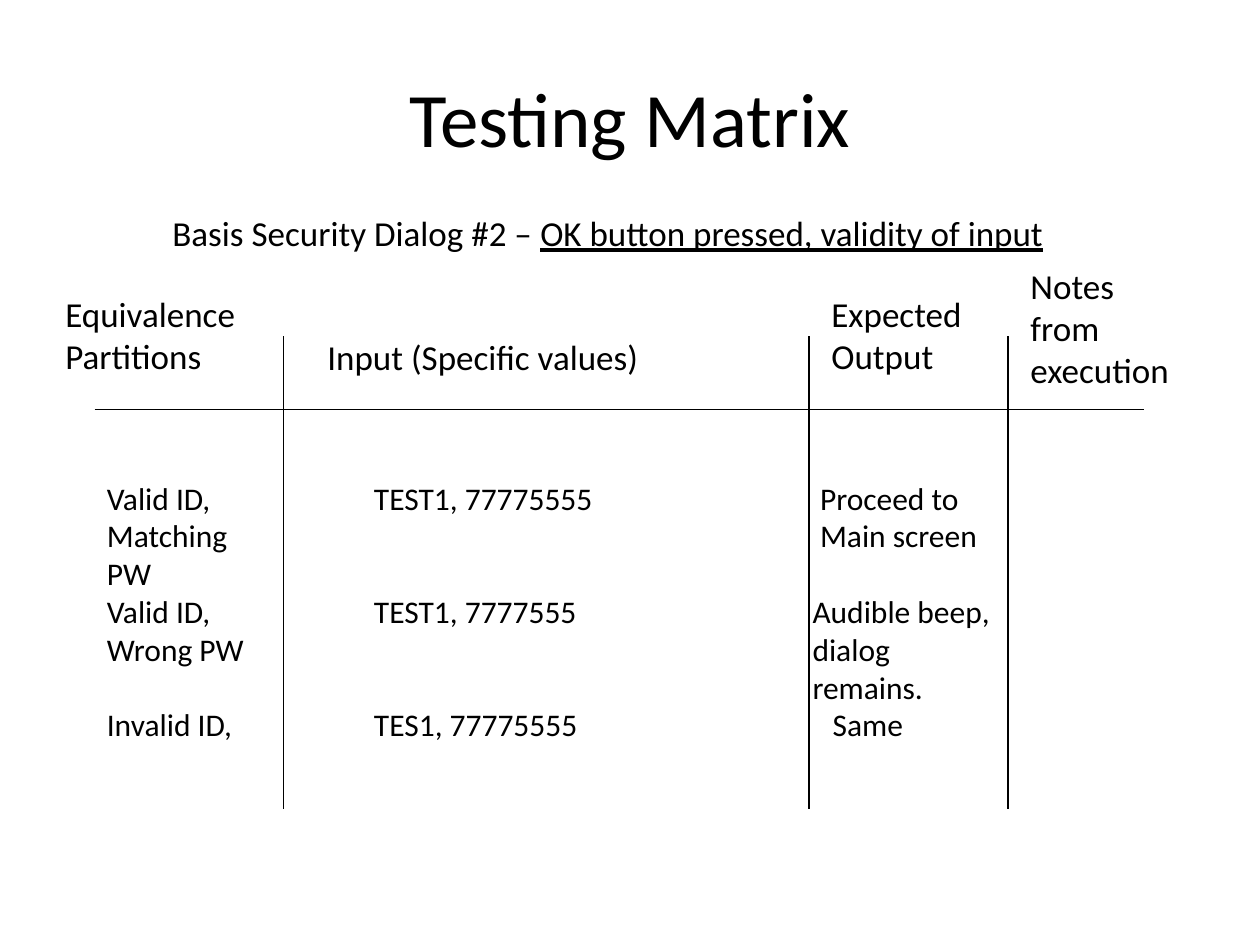
from lxml.etree import SubElement
from pptx import Presentation
from pptx.dml.color import RGBColor
from pptx.enum.shapes import MSO_CONNECTOR
from pptx.enum.text import MSO_ANCHOR, PP_ALIGN
from pptx.oxml.ns import qn
from pptx.util import Pt

EMU_PER_PX = 9144
COLORS = {"ink": "000000", "background": "FFFFFF"}
FONT = "Calibri"

HEADERS = [
    ("Equivalence Partitions", (-33, 22, 171, 77)),
    ("Input (Specific values)", (175, 56, 325, 44)),
    ("Expected Output", (575, 22, 142, 77)),
    ("Notes from execution", (733, 0, 142, 110)),
]
ROWS = [
    (["Valid ID,", "Matching PW"], "TEST1, 77775555", ["Proceed to", "Main screen"], 566),
    (["Valid ID,", "Wrong PW"], "TEST1, 7777555", ["Audible beep,", "dialog remains."], 560),
    (["Invalid ID,"], "TES1, 77775555", ["Same"], 576),
]


def px(length):
    """Turn px into EMU."""
    return length * EMU_PER_PX


def color(name):
    """Look up a named colour."""
    return RGBColor.from_string(COLORS[name])


def add_text(slide, box, paragraphs, size=20, align=PP_ALIGN.LEFT,
             anchor=MSO_ANCHOR.TOP, wrap=True):
    """Add a text box; each paragraph is a list of (text, underline) runs."""
    shape = slide.shapes.add_textbox(*map(px, box))
    frame = shape.text_frame
    frame.word_wrap = wrap
    frame.vertical_anchor = anchor
    for index, runs in enumerate(paragraphs):
        paragraph = frame.paragraphs[0] if index == 0 else frame.add_paragraph()
        paragraph.alignment = align
        for text, underline in runs:
            run = paragraph.add_run()
            run.text = text
            run.font.name = FONT
            run.font.size = Pt(size)
            run.font.underline = underline
            run.font.color.rgb = color("ink")
    return shape


def add_rule(slide, start, end):
    """Add a thin straight rule between two points."""
    connector = slide.shapes.add_connector(
        MSO_CONNECTOR.STRAIGHT, *map(px, (*start, *end)))
    connector.line.color.rgb = color("ink")
    connector.line.width = Pt(1)
    SubElement(connector.element.spPr, qn("a:effectLst"))


def add_heading(slide, left, top, width):
    """Place the title and the subtitle below it."""
    add_text(slide, (left, top, width, 125), [[("Testing Matrix", False)]],
             size=44, align=PP_ALIGN.CENTER, anchor=MSO_ANCHOR.MIDDLE)
    subtitle = [("Basis Security Dialog #2 – ", False),
                ("OK button pressed, validity of input", True)]
    add_text(slide, (left + 77, top + 133, 731, 44), [subtitle])


def add_grid(slide, left, top, width, height):
    """Draw the header rule and the column rules."""
    add_rule(slide, (left, top + 58), (left + width, top + 58))
    for offset in (150, 567, 725):
        add_rule(slide, (left + offset, top), (left + offset, top + height))


def add_headers(slide, left, top):
    """Place the column headers."""
    for text, (x, y, width, height) in HEADERS:
        add_text(slide, (left + x, top + y, width, height), [[(text, False)]])


def add_rows(slide, left, top, step):
    """Place the test cases at equal vertical steps."""
    for index, (partition, values, output, output_left) in enumerate(ROWS):
        cells = [(0, 150, partition), (212, 300, [values]), (output_left, 165, output)]
        for offset, width, lines in cells:
            box = (left + offset, top + index * step, width, 10 + 30 * len(lines))
            add_text(slide, box, [[(line, False)] for line in lines], size=18, wrap=False)


def main():
    """Build and save the slide."""
    presentation = Presentation()
    presentation.slide_width = px(1000)
    presentation.slide_height = px(750)
    slide = presentation.slides.add_slide(presentation.slide_layouts[6])
    slide.background.fill.solid()
    slide.background.fill.fore_color.rgb = color("background")
    add_grid(slide, 75, 267, 833, 375)
    add_heading(slide, 50, 30, 900)
    add_headers(slide, 75, 205)
    add_rows(slide, 75, 375, 90)
    presentation.save("out.pptx")


if __name__ == "__main__":
    main()
